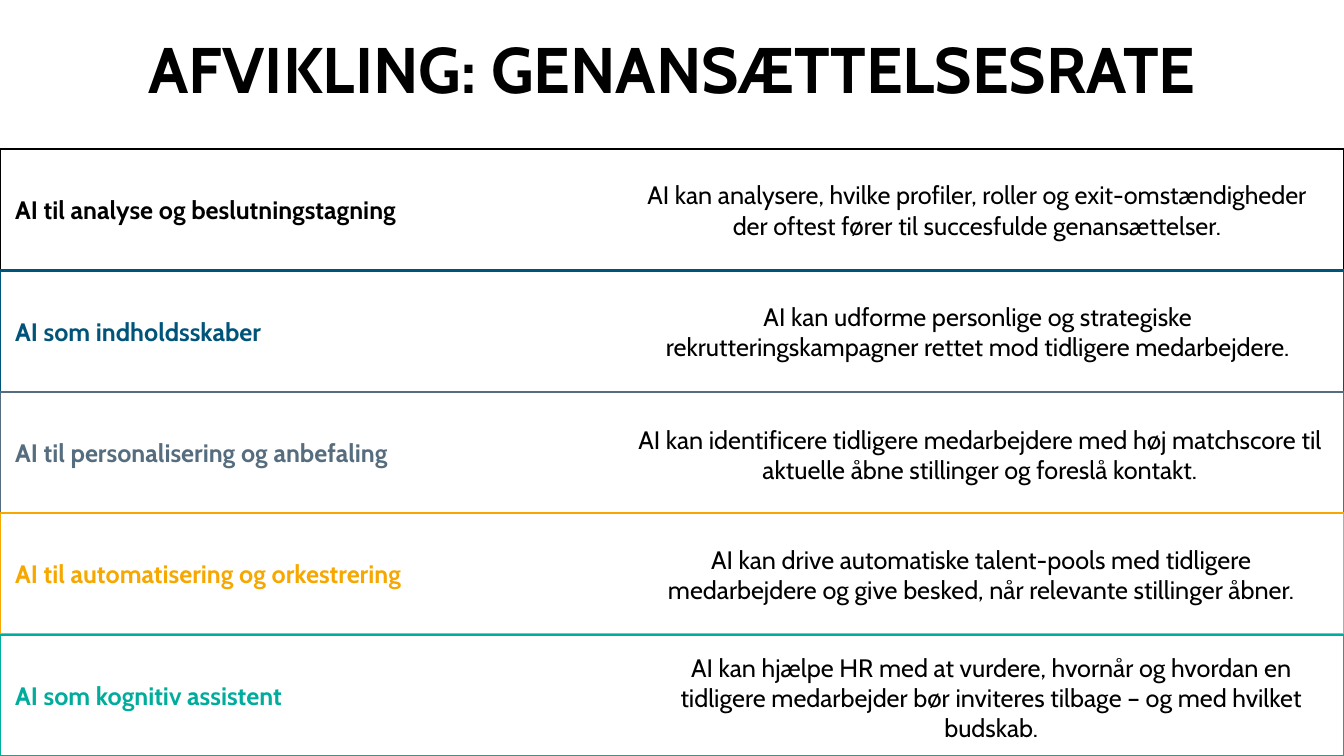
"""Build the slide that lists five uses of AI for the rehiring rate."""
from dataclasses import dataclass

from pptx import Presentation
from pptx.dml.color import RGBColor
from pptx.enum.shapes import MSO_SHAPE
from pptx.enum.text import MSO_ANCHOR, PP_ALIGN
from pptx.shapes.autoshape import Shape
from pptx.shapes.group import GroupShape
from pptx.slide import Slide
from pptx.util import Inches, Pt

RECTANGLE = MSO_SHAPE.RECTANGLE
MIDDLE = MSO_ANCHOR.MIDDLE
LEFT, CENTER = PP_ALIGN.LEFT, PP_ALIGN.CENTER
SLIDE_WIDTH, SLIDE_HEIGHT = Inches(13.33), Inches(7.5)
BLANK_LAYOUT = 6


@dataclass(frozen=True)
class Theme:
    """Font, type sizes, line width and colours."""
    font: str = "Cabin"
    title_size: int = 46
    body_size: int = 18
    outline: float = 1.5
    black: str = "000000"
    blue: str = "00547A"
    slate: str = "556D7E"
    amber: str = "F6A800"
    teal: str = "00AC9C"


@dataclass(frozen=True)
class Area:
    """A rectangle in percent of the slide's width and height."""
    left: float
    top: float
    width: float
    height: float

    def emu(self) -> tuple[int, int, int, int]:
        """Return left, top, width and height in EMU."""
        return (round(self.left * SLIDE_WIDTH / 100), round(self.top * SLIDE_HEIGHT / 100),
                round(self.width * SLIDE_WIDTH / 100), round(self.height * SLIDE_HEIGHT / 100))


@dataclass(frozen=True)
class AiRole:
    """One band: its role, colour, explanation and the explanation's offset."""
    role: str
    color: str
    explanation: str
    explanation_left: float
    explanation_drop: float = 0


THEME = Theme()
TITLE_AREA = Area(0, 0, 100, 17.87)
BANDS_TOP = 19.73
EXPLANATION_WIDTH = 52.5
ROLE_INDENT = Inches(0.15)
AI_ROLES = [
    AiRole("AI til analyse og beslutningstagning", THEME.black,
           "AI kan analysere, hvilke profiler, roller og exit-omstændigheder "
           "der oftest fører til succesfulde genansættelser.", 46.44),
    AiRole("AI som indholdsskaber", THEME.blue,
           "AI kan udforme personlige og strategiske "
           "rekrutteringskampagner rettet mod tidligere medarbejdere.", 46.5),
    AiRole("AI til personalisering og anbefaling", THEME.slate,
           "AI kan identificere tidligere medarbejdere med høj matchscore til "
           "aktuelle åbne stillinger og foreslå kontakt.", 46.66, 0.3),
    AiRole("AI til automatisering og orkestrering", THEME.amber,
           "AI kan drive automatiske talent-pools med tidligere "
           "medarbejdere og give besked, når relevante stillinger åbner.", 46.75, 0.1),
    AiRole("AI som kognitiv assistent", THEME.teal,
           "AI kan hjælpe HR med at vurdere, hvornår og hvordan en "
           "tidligere medarbejder bør inviteres tilbage – og med hvilket budskab.", 47.5, 0.3),
]
BAND_HEIGHT = (100 - BANDS_TOP) / len(AI_ROLES)


def write(holder: Shape, wording: str, size: int, color: str, bold: bool, align: PP_ALIGN) -> None:
    """Put one formatted run into a shape, centred vertically."""
    frame = holder.text_frame
    frame.word_wrap = True
    frame.vertical_anchor = MIDDLE
    paragraph = frame.paragraphs[0]
    paragraph.alignment = align
    run = paragraph.add_run()
    run.text = wording
    run.font.name = THEME.font
    run.font.size = Pt(size)
    run.font.bold = bold
    run.font.color.rgb = RGBColor.from_string(color)


def draw_band(bands: GroupShape, entry: AiRole, top: float) -> None:
    """Draw an outlined band that carries the role."""
    band = bands.shapes.add_shape(RECTANGLE, *Area(0, top, 100, BAND_HEIGHT).emu())
    band.shadow.inherit = False
    band.fill.background()
    band.line.color.rgb = RGBColor.from_string(entry.color)
    band.line.width = Pt(THEME.outline)
    band.text_frame.margin_left = ROLE_INDENT
    write(band, entry.role, THEME.body_size, entry.color, True, LEFT)


def draw_text(slide: Slide, area: Area, wording: str, size: int, bold: bool) -> None:
    """Draw a centred black text box."""
    write(slide.shapes.add_textbox(*area.emu()), wording, size, THEME.black, bold, CENTER)


def main() -> None:
    """Build and save the presentation."""
    presentation = Presentation()
    presentation.slide_width, presentation.slide_height = SLIDE_WIDTH, SLIDE_HEIGHT
    slide = presentation.slides.add_slide(presentation.slide_layouts[BLANK_LAYOUT])
    bands = slide.shapes.add_group_shape()
    for row, entry in enumerate(AI_ROLES):
        draw_band(bands, entry, BANDS_TOP + row * BAND_HEIGHT)
    draw_text(slide, TITLE_AREA, "AFVIKLING: GENANSÆTTELSESRATE", THEME.title_size, True)
    for row, entry in enumerate(AI_ROLES):
        top = BANDS_TOP + row * BAND_HEIGHT + entry.explanation_drop
        area = Area(entry.explanation_left, top, EXPLANATION_WIDTH, BAND_HEIGHT)
        draw_text(slide, area, entry.explanation, THEME.body_size, False)
    presentation.save("out.pptx")


if __name__ == "__main__":
    main()
